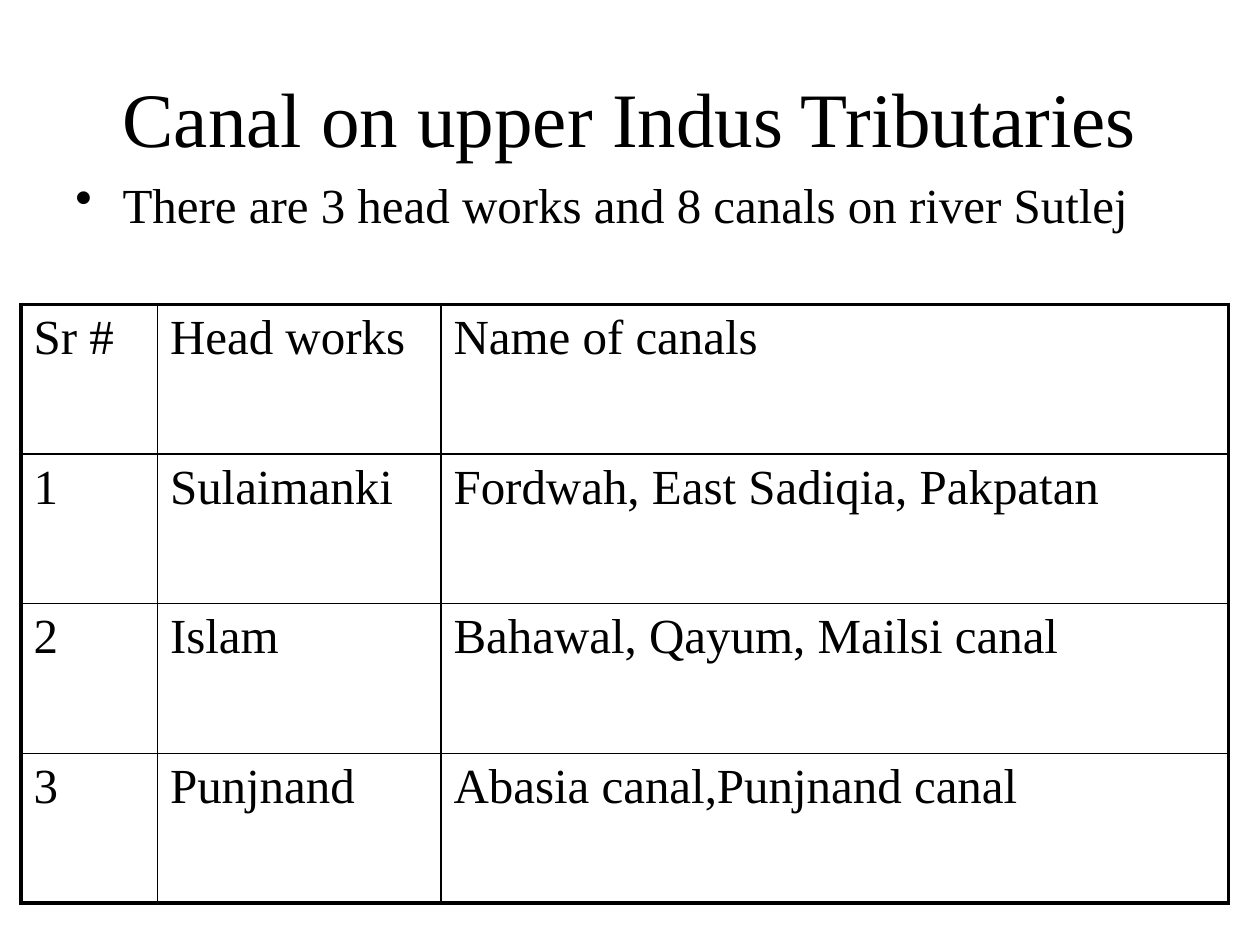
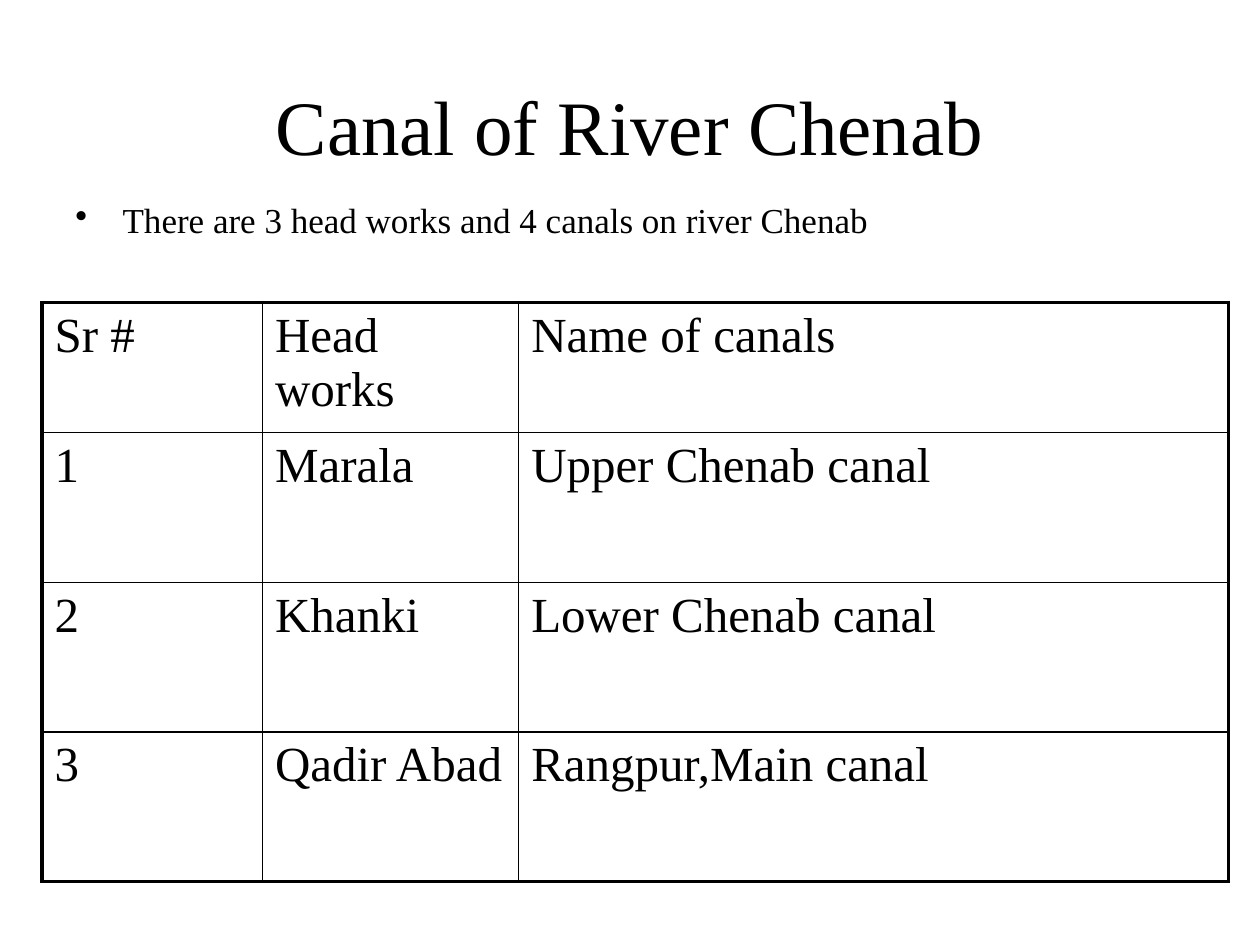
from lxml import etree
from pptx import Presentation
from pptx import util as u
from pptx.dml.color import RGBColor
from pptx.enum import text
from pptx.oxml import ns

COLORS = {"ink": "000000", "paper": "FFFFFF"}
FONT = "Times New Roman"
UNIT = u.Inches(10) // 120  # the slide is a grid of 120 columns by 90 rows
THICK, THIN = 2.25, 1
HEADS = ("Sr #", "Head works", "Name of canals")

PAGES = [
    {
        "title": "Canal on upper Indus Tributaries",
        "head": (6, 3.6, 108, 15),
        "note": "There are 3 head works and 8 canals on river Sutlej",
        "body": (6, 16, 109, 7),
        "size": 28,
        "lead": 1.0,
        "spot": (2, 29),
        "cols": (13, 27, 75),
        "rows": (14.25, 14.25, 14.25, 14.25),
        "data": [
            ("1", "Sulaimanki", "Fordwah, East Sadiqia, Pakpatan"),
            ("2", "Islam", "Bahawal, Qayum, Mailsi canal"),
            ("3", "Punjnand", "Abasia canal,Punjnand canal"),
        ],
    },
    {
        "title": "Canal of River Chenab",
        "head": (6, 4.4, 108, 15),
        "note": "There are 3 head works and 4 canals on river Chenab",
        "body": (6, 18.8, 102, 8),
        "size": 20,
        "lead": 0.9,
        "spot": (4, 28.8),
        "cols": (21, 24.4, 67.6),
        "rows": (11.5, 14.25, 14.25, 14.25),
        "data": [
            ("1", "Marala", "Upper Chenab canal"),
            ("2", "Khanki", "Lower Chenab canal"),
            ("3", "Qadir Abad", "Rangpur,Main canal"),
        ],
    },
]


def write(frame, words, size, before=True, **look):
    """Fill a text frame with one styled paragraph and return its pPr."""
    frame.word_wrap = True
    par = frame.paragraphs[0]
    par.text = words
    for name, value in look.items():
        setattr(par, name, value)
    font = par.runs[0].font
    for name, value in {"name": FONT, "size": u.Pt(size)}.items():
        setattr(font, name, value)
    font.color.rgb = RGBColor.from_string(COLORS["ink"])
    props = par._p.get_or_add_pPr()
    if before:
        gap = etree.SubElement(props, ns.qn("a:spcBef"))
        etree.SubElement(gap, ns.qn("a:spcPct"), val="20000")
    return props


def rule(cell, side, width):
    """Draw one border of a cell; side is L, R, T or B."""
    line = etree.Element(ns.qn(f"a:ln{side}"), w=str(u.Pt(width)))
    fill = etree.SubElement(line, ns.qn("a:solidFill"))
    etree.SubElement(fill, ns.qn("a:srgbClr"), val=COLORS["ink"])
    cell._tc.get_or_add_tcPr().append(line)


deck = Presentation()
deck.slide_width, deck.slide_height = 120 * UNIT, 90 * UNIT

for page in PAGES:
    slide = deck.slides.add_slide(deck.slide_layouts[6])
    back = slide.background.fill
    back.solid()
    back.fore_color.rgb = RGBColor.from_string(COLORS["paper"])

    # Title
    box = slide.shapes.add_textbox(*[int(n * UNIT) for n in page["head"]])
    box.text_frame.vertical_anchor = text.MSO_ANCHOR.MIDDLE
    write(box.text_frame, page["title"], 44, before=False,
          alignment=text.PP_ALIGN.CENTER)

    # Bulleted note
    box = slide.shapes.add_textbox(*[int(n * UNIT) for n in page["body"]])
    props = write(box.text_frame, page["note"], page["size"],
                  line_spacing=page["lead"])
    dent = int(4.5 * UNIT)
    for name, value in {"marL": dent, "indent": -dent}.items():
        props.set(name, str(value))
    etree.SubElement(props, ns.qn("a:buChar"), char="•")

    # Table of head works and canals
    cells = [HEADS] + page["data"]
    cols, rows = page["cols"], page["rows"]
    area = [int(n * UNIT) for n in (*page["spot"], sum(cols), sum(rows))]
    table = slide.shapes.add_table(len(rows), len(cols), *area).table
    table.first_row = table.horz_banding = False
    for col, width in zip(table.columns, cols):
        col.width = int(width * UNIT)
    for row, height in zip(table.rows, rows):
        row.height = int(height * UNIT)
    for r, line in enumerate(cells):
        for c, words in enumerate(line):
            cell = table.cell(r, c)
            write(cell.text_frame, words, 28)
            edges = {"L": c == 0, "R": c == len(cols) - 1,
                     "T": r == 0, "B": r == len(rows) - 1}
            for side, outer in edges.items():
                rule(cell, side, THICK if outer else THIN)
            cell.fill.background()

deck.save("out.pptx")
